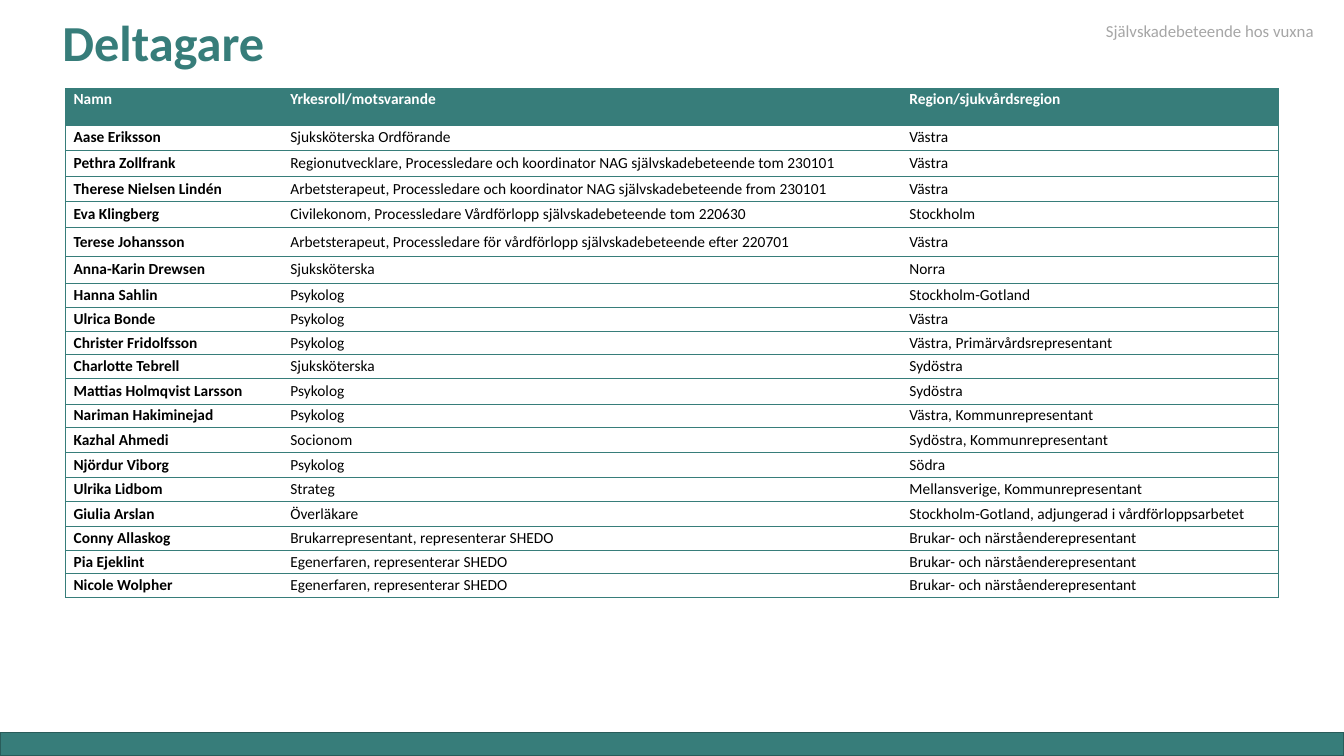
from lxml import etree
from pptx import Presentation
from pptx.dml.color import RGBColor
from pptx.enum import shapes, text
from pptx.oxml import ns
from pptx.util import Inches, Pt

TEAL, BLACK, WHITE, GREY = "377D7A", "000000", "FFFFFF", "A6A6A6"
FONT = "Calibri"
COLS = [2.15, 6.14, 3.74]
TALL = [0.36, 0.25, 0.26, 0.25, 0.26, 0.28, 0.27, 0.24, 0.24, 0.23,
        0.23, 0.26, 0.23, 0.25, 0.25, 0.24, 0.24, 0.24, 0.23, 0.24]
ROWS = [
    ("Namn", "Yrkesroll/motsvarande", "Region/sjukvårdsregion"),
    ("Aase Eriksson", "Sjuksköterska Ordförande", "Västra"),
    ("Pethra Zollfrank", "Regionutvecklare, Processledare och koordinator NAG självskadebeteende tom 230101", "Västra"),
    ("Therese Nielsen Lindén", "Arbetsterapeut, Processledare och koordinator NAG självskadebeteende from 230101", "Västra"),
    ("Eva Klingberg", "Civilekonom, Processledare Vårdförlopp självskadebeteende tom 220630", "Stockholm"),
    ("Terese Johansson", "Arbetsterapeut, Processledare för vårdförlopp självskadebeteende efter 220701", "Västra"),
    ("Anna-Karin Drewsen", "Sjuksköterska", "Norra"),
    ("Hanna Sahlin", "Psykolog", "Stockholm-Gotland"),
    ("Ulrica Bonde", "Psykolog", "Västra"),
    ("Christer Fridolfsson", "Psykolog", "Västra, Primärvårdsrepresentant"),
    ("Charlotte Tebrell", "Sjuksköterska", "Sydöstra"),
    ("Mattias Holmqvist Larsson", "Psykolog", "Sydöstra"),
    ("Nariman Hakiminejad", "Psykolog", "Västra, Kommunrepresentant"),
    ("Kazhal Ahmedi", "Socionom", "Sydöstra, Kommunrepresentant"),
    ("Njördur Viborg", "Psykolog", "Södra"),
    ("Ulrika Lidbom", "Strateg", "Mellansverige, Kommunrepresentant"),
    ("Giulia Arslan", "Överläkare", "Stockholm-Gotland, adjungerad i vårdförloppsarbetet"),
    ("Conny Allaskog", "Brukarrepresentant, representerar SHEDO", "Brukar- och närståenderepresentant"),
    ("Pia Ejeklint", "Egenerfaren, representerar SHEDO", "Brukar- och närståenderepresentant"),
    ("Nicole Wolpher", "Egenerfaren, representerar SHEDO", "Brukar- och närståenderepresentant"),
]


def paint(color):
    return RGBColor.from_string(color)


def style(para, size, color, bold=False, space=None):
    font = para.font
    font.name, font.size, font.bold = FONT, Pt(size), bold
    font.color.rgb = paint(color)
    if space:
        para.line_spacing = space


def label(slide, box, words, size, color, bold=False, space=None, anchor=text.MSO_ANCHOR.TOP):
    frame = slide.shapes.add_textbox(*map(Inches, box)).text_frame
    frame.word_wrap = True
    frame.vertical_anchor = anchor
    frame.text = words
    style(frame.paragraphs[0], size, color, bold, space)


def bar(slide, box, fill, edge):
    shape = slide.shapes.add_shape(shapes.MSO_SHAPE.RECTANGLE, *map(Inches, box))
    shape.shadow.inherit = False
    shape.fill.solid()
    shape.fill.fore_color.rgb = paint(fill)
    shape.line.color.rgb = paint(edge)
    shape.line.width = Pt(1)


def border(cell, sides):
    props = cell._tc.get_or_add_tcPr()
    for side in "LRTB":
        line = etree.SubElement(props, ns.qn("a:ln" + side), w=str(Pt(0.5)))
        if side in sides:
            fill = etree.SubElement(line, ns.qn("a:solidFill"))
            etree.SubElement(fill, ns.qn("a:srgbClr"), val=TEAL)
        else:
            etree.SubElement(line, ns.qn("a:noFill"))


def fill_cell(cell, words, head, first, last):
    border(cell, "TB" + "L" * first + "R" * last)
    cell.fill.solid()
    cell.fill.fore_color.rgb = paint(TEAL if head else WHITE)
    cell.margin_left = cell.margin_right = Inches(0.08)
    cell.margin_top = cell.margin_bottom = 0
    cell.vertical_anchor = text.MSO_ANCHOR.TOP if head else text.MSO_ANCHOR.MIDDLE
    cell.text = words
    style(cell.text_frame.paragraphs[0], 11, WHITE if head else BLACK,
          head or first, 1.06 if head else None)


def roster(slide, left, top):
    table = slide.shapes.add_table(
        len(ROWS), len(COLS), Inches(left), Inches(top),
        Inches(sum(COLS)), Inches(sum(TALL))).table
    table.horz_banding = False
    for col, width in zip(table.columns, COLS):
        col.width = Inches(width)
    for r, (row, tall) in enumerate(zip(ROWS, TALL)):
        table.rows[r].height = Inches(tall)
        for c, words in enumerate(row):
            fill_cell(table.cell(r, c), words, r == 0, c == 0, c == len(COLS) - 1)


def main():
    deck = Presentation()
    deck.slide_width, deck.slide_height = Inches(13.33), Inches(7.5)
    slide = deck.slides.add_slide(deck.slide_layouts[6])
    bar(slide, (0, 7.27, 13.33, 0.23), TEAL, "295C5A")
    label(slide, (0.52, 0.04, 11.5, 0.82), "Deltagare", 36, TEAL, True, 0.9,
          text.MSO_ANCHOR.MIDDLE)
    roster(slide, 0.65, 0.88)
    label(slide, (10.87, 0.16, 2.36, 0.3), "Självskadebeteende hos vuxna", 12, GREY)
    deck.save("out.pptx")


if __name__ == "__main__":
    main()
